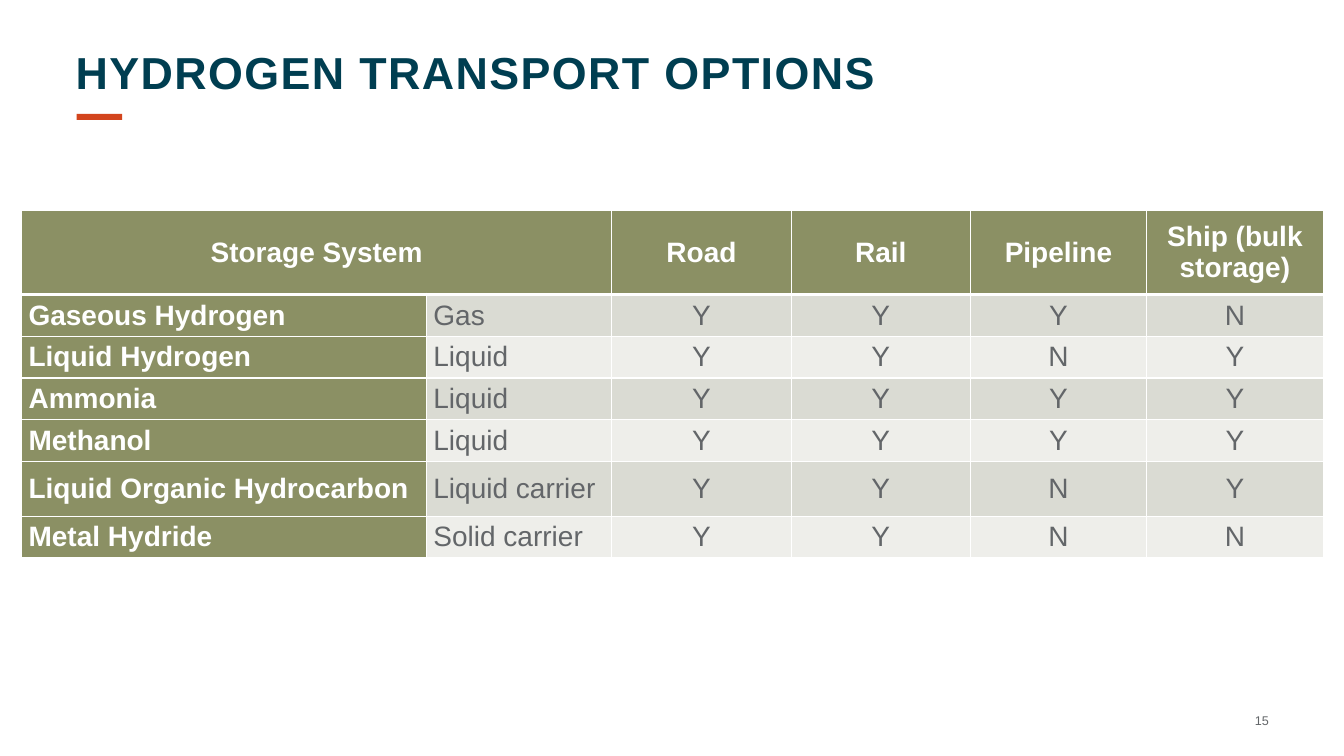
from typing import NamedTuple

from lxml.etree import SubElement
from pptx import Presentation
from pptx.dml.color import RGBColor
from pptx.enum.shapes import MSO_SHAPE
from pptx.enum.text import MSO_ANCHOR, PP_ALIGN
from pptx.oxml.ns import qn
from pptx.slide import Slide
from pptx.table import _Cell
from pptx.text.text import TextFrame, _Paragraph
from pptx.util import Pt

FONT = "Arial"
NAVY, ORANGE, GREY, WHITE = "003E51", "D3451D", "636669", "FFFFFF"
OLIVE, BAND_DARK, BAND_LIGHT = "8B9064", "DADBD3", "EEEEEA"

COLUMN_WIDTHS = [289.2, 132.4, 128.2, 128, 126, 126]
HEADER_HEIGHT, ROW_HEIGHT, TALL_ROW_HEIGHT = 59.8, 29.9, 38.9
HEADINGS = ["Storage System", "", "Road", "Rail", "Pipeline", "Ship (bulk storage)"]


class StorageSystem(NamedTuple):
    name: str
    form: str
    transport: str  # one letter each for road, rail, pipeline and ship
    height: float = ROW_HEIGHT


SYSTEMS = [
    StorageSystem("Gaseous Hydrogen", "Gas", "YYYN"),
    StorageSystem("Liquid Hydrogen", "Liquid", "YYNY"),
    StorageSystem("Ammonia", "Liquid", "YYYY"),
    StorageSystem("Methanol", "Liquid", "YYYY"),
    StorageSystem("Liquid Organic Hydrocarbon", "Liquid carrier", "YYNY", TALL_ROW_HEIGHT),
    StorageSystem("Metal Hydride", "Solid carrier", "YYNN"),
]


class Box(NamedTuple):
    left: float
    top: float
    width: float
    height: float

    def lengths(self) -> list[Pt]:
        return [Pt(value) for value in self]


def color(value: str) -> RGBColor:
    return RGBColor.from_string(value)


def write(frame: TextFrame, text: str, size: float, ink: str, bold: bool = False,
          align: PP_ALIGN = PP_ALIGN.LEFT) -> _Paragraph:
    para = frame.paragraphs[0]
    para.text = text
    para.alignment = align
    para.font.name = FONT
    para.font.size = Pt(size)
    para.font.bold = bold
    para.font.color.rgb = color(ink)
    return para


def add_text_frame(page: Slide, box: Box, anchor: MSO_ANCHOR) -> TextFrame:
    frame = page.shapes.add_textbox(*box.lengths()).text_frame
    frame.word_wrap = True
    frame.vertical_anchor = anchor
    frame.margin_left = frame.margin_right = frame.margin_top = frame.margin_bottom = 0
    return frame


def add_title(page: Slide) -> None:
    frame = add_text_frame(page, Box(54, 36, 852, 45), MSO_ANCHOR.TOP)
    para = write(frame, "HYDROGEN TRANSPORT OPTIONS", 32, NAVY, bold=True)
    para.line_spacing = 0.9
    para.runs[0].font._element.set("spc", "100")

    accent = page.shapes.add_shape(MSO_SHAPE.RECTANGLE, *Box(54.8, 81.4, 32.4, 4.3).lengths())
    accent.shadow.inherit = False
    accent.fill.solid()
    accent.fill.fore_color.rgb = color(ORANGE)
    accent.line.fill.background()


def add_borders(cell: _Cell, bottom: float) -> None:
    """Draw white cell borders, 1 pt wide except for the bottom one."""
    properties = cell._tc.get_or_add_tcPr()
    for side, width in {"L": 1, "R": 1, "T": 1, "B": bottom}.items():
        line = SubElement(properties, qn(f"a:ln{side}"), w=str(Pt(width)))
        SubElement(SubElement(line, qn("a:solidFill")), qn("a:srgbClr"), val=WHITE)


def fill_cell(cell: _Cell, text: str, fill: str, align: PP_ALIGN, bottom: float = 1) -> None:
    add_borders(cell, bottom)
    cell.fill.solid()
    cell.fill.fore_color.rgb = color(fill)
    cell.vertical_anchor = MSO_ANCHOR.MIDDLE
    cell.margin_left = cell.margin_right = Pt(5)
    cell.margin_top = cell.margin_bottom = 0
    heading = fill == OLIVE
    write(cell.text_frame, text, 20, WHITE if heading else GREY, heading, align)


def add_transport_table(page: Slide) -> None:
    heights = [HEADER_HEIGHT] + [system.height for system in SYSTEMS]
    box = Box(15.4, 150.5, sum(COLUMN_WIDTHS), sum(heights))
    table = page.shapes.add_table(len(heights), len(COLUMN_WIDTHS), *box.lengths()).table
    for column, width in zip(table.columns, COLUMN_WIDTHS):
        column.width = Pt(width)
    for row, height in zip(table.rows, heights):
        row.height = Pt(height)

    for index, heading in enumerate(HEADINGS):
        fill_cell(table.cell(0, index), heading, OLIVE, PP_ALIGN.CENTER, bottom=3)
    table.cell(0, 0).merge(table.cell(0, 1))

    for number, system in enumerate(SYSTEMS, start=1):
        band = BAND_DARK if number % 2 else BAND_LIGHT
        fill_cell(table.cell(number, 0), system.name, OLIVE, PP_ALIGN.LEFT)
        fill_cell(table.cell(number, 1), system.form, band, PP_ALIGN.LEFT)
        for index, answer in enumerate(system.transport, start=2):
            fill_cell(table.cell(number, index), answer, band, PP_ALIGN.CENTER)


def main() -> None:
    deck = Presentation()
    deck.slide_width, deck.slide_height = Pt(960), Pt(540)
    page = deck.slides.add_slide(deck.slide_layouts[6])
    add_title(page)
    add_transport_table(page)
    page_number = add_text_frame(page, Box(879, 500.4, 27.4, 28.8), MSO_ANCHOR.MIDDLE)
    write(page_number, "15", 9, GREY, align=PP_ALIGN.RIGHT)
    deck.save("out.pptx")


if __name__ == "__main__":
    main()
